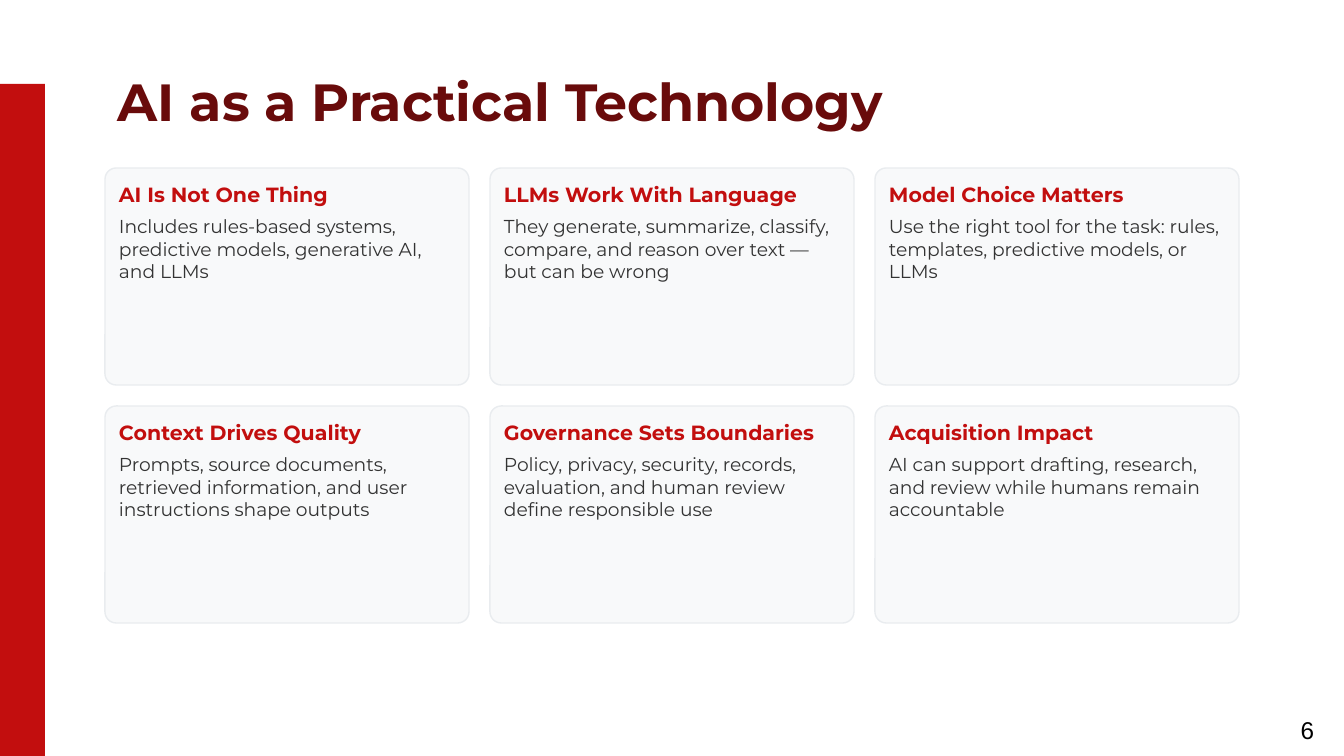
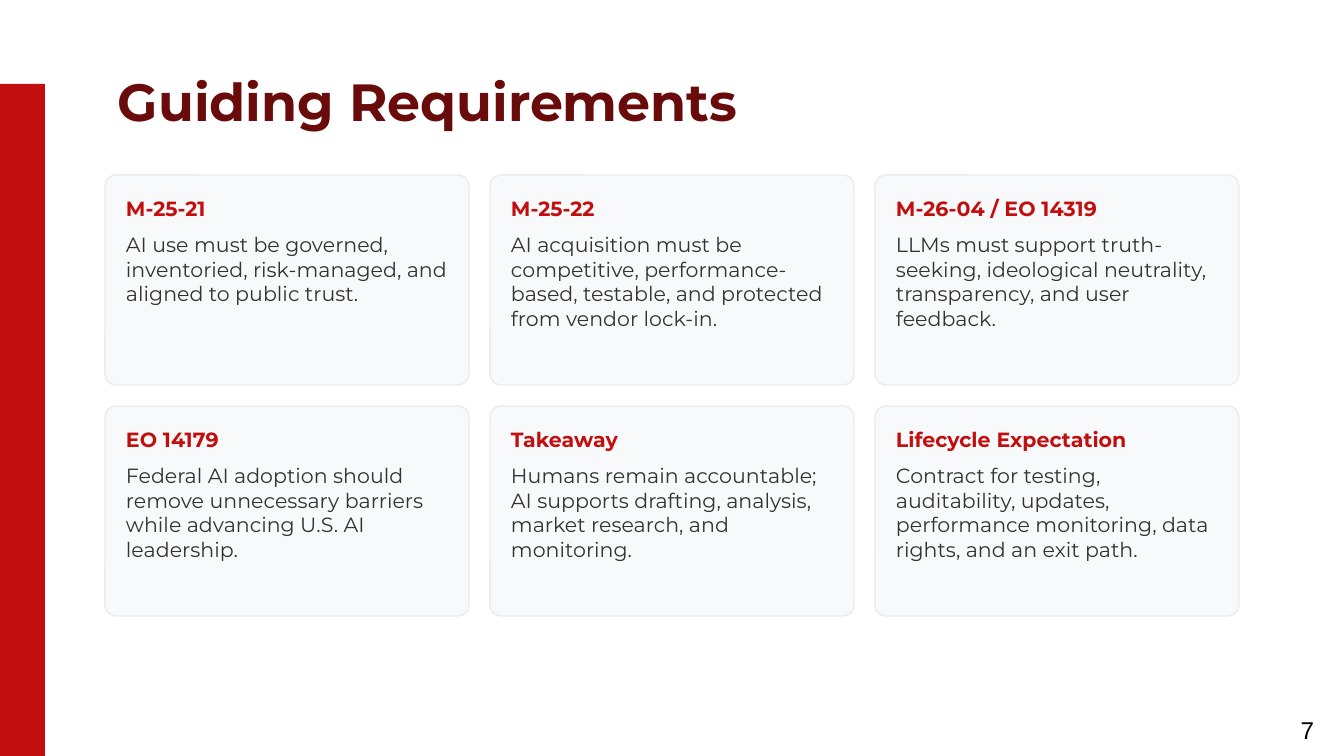
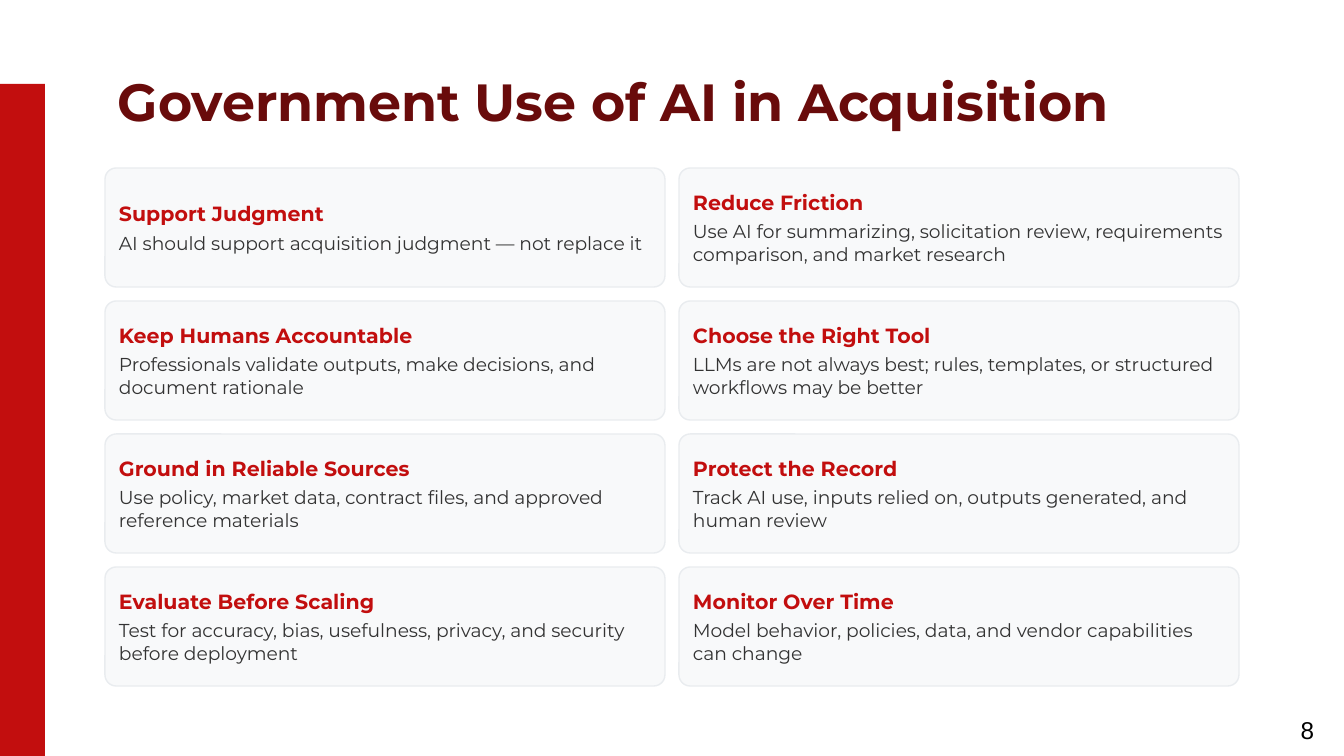
import pptx
import pptx.dml.color
import pptx.enum.shapes
import pptx.enum.text
import pptx.util

# Content: page number, title, card grid format and (heading, body) cards
SLIDES = [
    {
        "number": 6,
        "title": "AI as a Practical Technology",
        "grid": {"columns": 3, "top": 168, "height": 217, "gap": 21, "pad_x": 14, "pad_y": 14},
        "text": {"body_size": 10, "before": 4.5, "anchor": "TOP"},
        "cards": [
            ("AI Is Not One Thing",
             "Includes rules-based systems, predictive models, generative AI, and LLMs"),
            ("LLMs Work With Language",
             "They generate, summarize, classify, compare, and reason over text — but can be wrong"),
            ("Model Choice Matters",
             "Use the right tool for the task: rules, templates, predictive models, or LLMs"),
            ("Context Drives Quality",
             "Prompts, source documents, retrieved information, and user instructions shape outputs"),
            ("Governance Sets Boundaries",
             "Policy, privacy, security, records, evaluation, and human review define responsible use"),
            ("Acquisition Impact",
             "AI can support drafting, research, and review while humans remain accountable"),
        ],
    },
    {
        "number": 7,
        "title": "Guiding Requirements",
        "grid": {"columns": 3, "top": 175, "height": 210, "gap": 21, "pad_x": 21, "pad_y": 21},
        "text": {"body_size": 11, "before": 6, "anchor": "TOP"},
        "cards": [
            ("M-25-21",
             "AI use must be governed, inventoried, risk-managed, and aligned to public trust."),
            ("M-25-22",
             "AI acquisition must be competitive, performance-based, testable, and protected "
             "from vendor lock-in."),
            ("M-26-04 / EO 14319",
             "LLMs must support truth-seeking, ideological neutrality, transparency, and user feedback."),
            ("EO 14179",
             "Federal AI adoption should remove unnecessary barriers while advancing U.S. AI leadership."),
            ("Takeaway",
             "Humans remain accountable; AI supports drafting, analysis, market research, and monitoring."),
            ("Lifecycle Expectation",
             "Contract for testing, auditability, updates, performance monitoring, data rights, "
             "and an exit path."),
        ],
    },
    {
        "number": 8,
        "title": "Government Use of AI in Acquisition",
        "grid": {"columns": 2, "top": 168, "height": 119, "gap": 14, "pad_x": 14, "pad_y": 7},
        "text": {"body_size": 10, "before": 3, "anchor": "MIDDLE"},
        "cards": [
            ("Support Judgment",
             "AI should support acquisition judgment — not replace it"),
            ("Reduce Friction",
             "Use AI for summarizing, solicitation review, requirements comparison, and market research"),
            ("Keep Humans Accountable",
             "Professionals validate outputs, make decisions, and document rationale"),
            ("Choose the Right Tool",
             "LLMs are not always best; rules, templates, or structured workflows may be better"),
            ("Ground in Reliable Sources",
             "Use policy, market data, contract files, and approved reference materials"),
            ("Protect the Record",
             "Track AI use, inputs relied on, outputs generated, and human review"),
            ("Evaluate Before Scaling",
             "Test for accuracy, bias, usefulness, privacy, and security before deployment"),
            ("Monitor Over Time",
             "Model behavior, policies, data, and vendor capabilities can change"),
        ],
    },
]

# Shared look
RED, MAROON, INK, BLACK = "C20E0E", "690B0B", "333333", "000000"
CARD_FILL, CARD_LINE = "F8F9FA", "E9ECEF"
FONT, NUMBER_FONT = "Montserrat", "Arial"
PAGE_WIDTH, PAGE_HEIGHT = 1344, 756
LEFT, CONTENT_WIDTH = 105, 1134
BAND = (0, 84, 45, 672)
TITLE = (LEFT, 56, CONTENT_WIDTH, 85)
NUMBER = (1246, 702, 81, 58)
INSET = 13
RADIUS = 11.2
EMU_PER_PX = 914400 / 134.4

SHAPE = pptx.enum.shapes.MSO_SHAPE
ANCHOR = pptx.enum.text.MSO_ANCHOR
ALIGN = pptx.enum.text.PP_ALIGN


def px(length):
    return pptx.util.Emu(round(length * EMU_PER_PX))


def place(*lengths):
    return [px(length) for length in lengths]


def rgb(value):
    return pptx.dml.color.RGBColor.from_string(value)


def write(para, text, size, color, bold=False, font=FONT, before=0, align="LEFT"):
    para.alignment = ALIGN[align]
    para.space_before = pptx.util.Pt(before)
    span = para.add_run()
    span.text = text
    span.font.name = font
    span.font.size = pptx.util.Pt(size)
    span.font.bold = bold
    span.font.color.rgb = rgb(color)


def prepare_frame(box, inset=0, anchor="TOP"):
    frame = box.text_frame
    frame.word_wrap = True
    frame.auto_size = pptx.enum.text.MSO_AUTO_SIZE.NONE
    frame.vertical_anchor = ANCHOR[anchor]
    frame.margin_left = frame.margin_right = px(inset)
    frame.margin_top = frame.margin_bottom = px(inset)
    return frame


def add_block(shapes, kind, area, fill, line=None):
    block = shapes.add_shape(kind, *place(*area))
    block.shadow.inherit = False
    block.fill.solid()
    block.fill.fore_color.rgb = rgb(fill)
    if line:
        block.line.color.rgb = rgb(line)
        block.line.width = pptx.util.Pt(0.75)
    else:
        block.line.fill.background()
    return block


def add_card(page, area, pad_x, pad_y, heading, body, body_size, before, anchor):
    left, top, width, height = area
    group = page.shapes.add_group_shape()
    card = add_block(group.shapes, SHAPE.ROUNDED_RECTANGLE, area, CARD_FILL, CARD_LINE)
    card.adjustments[0] = RADIUS / height
    box = group.shapes.add_textbox(
        *place(left + pad_x, top + pad_y, width - 2 * pad_x, height - 2 * pad_y))
    frame = prepare_frame(box, anchor=anchor)
    write(frame.paragraphs[0], heading, 11, RED, bold=True)
    write(frame.add_paragraph(), body, body_size, INK, before=before)


def add_cards(page, cards, grid, text):
    columns, gap, height = grid["columns"], grid["gap"], grid["height"]
    width = (CONTENT_WIDTH - gap * (columns - 1)) / columns
    for index, (heading, body) in enumerate(cards):
        row, column = divmod(index, columns)
        area = (LEFT + column * (width + gap), grid["top"] + row * (height + gap), width, height)
        add_card(page, area, grid["pad_x"], grid["pad_y"], heading, body, **text)


def add_page(deck, layout, content):
    page = deck.slides.add_slide(layout)
    title = page.shapes.title
    title.left, title.top, title.width, title.height = place(*TITLE)
    write(prepare_frame(title, INSET).paragraphs[0], content["title"], 28, MAROON, bold=True)
    add_cards(page, content["cards"], content["grid"], content["text"])
    number = prepare_frame(page.shapes.add_textbox(*place(*NUMBER)), INSET)
    write(number.paragraphs[0], str(content["number"]), 13, BLACK, font=NUMBER_FONT, align="RIGHT")
    return page


def main():
    deck = pptx.Presentation()
    deck.slide_width, deck.slide_height = place(PAGE_WIDTH, PAGE_HEIGHT)
    layout = deck.slide_layouts.get_by_name("Title Only")
    pages = [add_page(deck, layout, content) for content in SLIDES]

    # The side band belongs to the layout, so every page shows it
    band = add_block(pages[0].shapes, SHAPE.RECTANGLE, BAND, RED)
    layout.shapes.element.append(band.element)
    deck.save("out.pptx")


if __name__ == "__main__":
    main()
